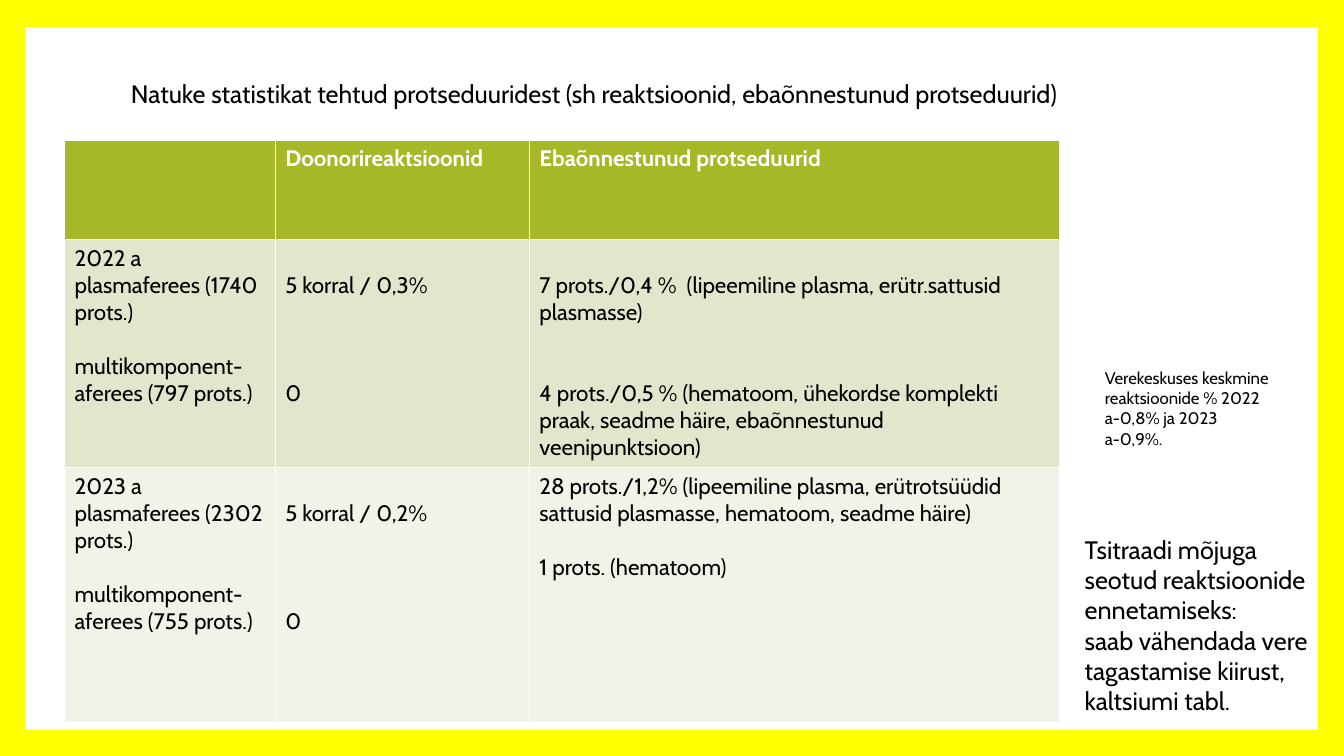
from dataclasses import dataclass

import pptx
import pptx.dml.color
import pptx.enum.shapes
import pptx.enum.text
import pptx.slide
import pptx.table
import pptx.text.text
import pptx.util

Inches = pptx.util.Inches
Pt = pptx.util.Pt
RGBColor = pptx.dml.color.RGBColor

YELLOW = RGBColor(0xFF, 0xFF, 0x00)
WHITE = RGBColor(0xFF, 0xFF, 0xFF)
BLACK = RGBColor(0x00, 0x00, 0x00)
HEADER_GREEN = RGBColor(0xA6, 0xB7, 0x27)
BAND_GREEN = RGBColor(0xE1, 0xE6, 0xCD)
PALE_GREEN = RGBColor(0xF1, 0xF3, 0xE8)

FONT = "Cabin"
TABLE_SIZE = 16
LINE_HEIGHT = 19.3  # points taken by one line of table text
CELL_MARGIN = 3.6


@dataclass(frozen=True)
class Line:
    text: str
    gap: int = 0  # empty lines above


@dataclass(frozen=True)
class Row:
    height: float
    fill: RGBColor
    color: RGBColor
    bold: bool
    cells: list[list[Line]]


@dataclass(frozen=True)
class Note:
    left: float
    top: float
    width: float
    height: float
    size: int
    wrap: bool
    texts: list[str]


COLUMN_WIDTHS = [2.09, 2.52, 5.26]

ROWS = [
    Row(0.99, HEADER_GREEN, WHITE, True, [
        [],
        [Line("Doonorireaktsioonid")],
        [Line("Ebaõnnestunud protseduurid")],
    ]),
    Row(2.26, BAND_GREEN, BLACK, False, [
        [Line("2022 a"), Line("plasmaferees (1740 prots.)"),
         Line("multikomponent-aferees (797 prots.)", 1)],
        [Line("5 korral / 0,3%", 1), Line("0", 3)],
        [Line("7 prots./0,4 %  (lipeemiline plasma, erütr.sattusid plasmasse)", 1),
         Line("4 prots./0,5 % (hematoom, ühekordse komplekti praak, "
              "seadme häire, ebaõnnestunud veenipunktsioon)", 2)],
    ]),
    Row(2.53, PALE_GREEN, BLACK, False, [
        [Line("2023 a"), Line("plasmaferees (2302 prots.)"),
         Line("multikomponent-aferees (755 prots.)", 1)],
        [Line("5 korral / 0,2%", 1), Line("0", 3)],
        [Line("28 prots./1,2% (lipeemiline plasma, erütrotsüüdid "
              "sattusid plasmasse, hematoom, seadme häire)"),
         Line("1 prots. (hematoom)", 1)],
    ]),
]

NOTES = [
    Note(1.2, 0.73, 9.45, 1.92, 18, False, [
        "Natuke statistikat tehtud protseduuridest "
        "(sh reaktsioonid, ebaõnnestunud protseduurid)"]),
    Note(10.66, 5.25, 2.53, 1.92, 18, True, [
        "Tsitraadi mõjuga seotud reaktsioonide ennetamiseks:",
        "saab vähendada vere tagastamise kiirust, kaltsiumi tabl."]),
    Note(10.86, 3.6, 1.9, 0.71, 12, True, [
        "Verekeskuses keskmine reaktsioonide % 2022 a-0,8% ja 2023 a-0,9%."]),
]


def add_paragraph(frame: pptx.text.text.TextFrame, index: int, text: str,
                  size: int, color: RGBColor, bold: bool = False):
    paragraph = frame.add_paragraph() if index else frame.paragraphs[0]
    paragraph.text = text
    font = paragraph.font
    font.name, font.size, font.bold = FONT, Pt(size), bold
    font.color.rgb = color
    return paragraph


def fill_cell(cell: pptx.table._Cell, lines: list[Line], row: Row) -> None:
    cell.fill.solid()
    cell.fill.fore_color.rgb = row.fill
    for index, line in enumerate(lines):
        paragraph = add_paragraph(cell.text_frame, index, line.text,
                                  TABLE_SIZE, row.color, row.bold)
        space = line.gap * LINE_HEIGHT
        if index:
            paragraph.space_before = Pt(space)
        else:
            cell.margin_top = Pt(CELL_MARGIN + space)


def add_statistics(slide: pptx.slide.Slide) -> None:
    table = slide.shapes.add_table(
        len(ROWS), len(COLUMN_WIDTHS), Inches(0.64), Inches(1.39),
        Inches(sum(COLUMN_WIDTHS)), Inches(sum(row.height for row in ROWS))).table
    for column, width in zip(table.columns, COLUMN_WIDTHS):
        column.width = Inches(width)
    for row_index, row in enumerate(ROWS):
        table.rows[row_index].height = Inches(row.height)
        for column_index, lines in enumerate(row.cells):
            fill_cell(table.cell(row_index, column_index), lines, row)


def add_note(slide: pptx.slide.Slide, note: Note) -> None:
    frame = slide.shapes.add_textbox(Inches(note.left), Inches(note.top),
                                     Inches(note.width), Inches(note.height)).text_frame
    frame.word_wrap = note.wrap
    frame.auto_size = pptx.enum.text.MSO_AUTO_SIZE.SHAPE_TO_FIT_TEXT
    for index, text in enumerate(note.texts):
        add_paragraph(frame, index, text, note.size, BLACK)


def main() -> None:
    presentation = pptx.Presentation()
    presentation.slide_width = Inches(13.33)
    presentation.slide_height = Inches(7.5)
    slide = presentation.slides.add_slide(presentation.slide_layouts[6])

    # Yellow frame around a white page
    slide.background.fill.solid()
    slide.background.fill.fore_color.rgb = YELLOW
    page = slide.shapes.add_shape(pptx.enum.shapes.MSO_SHAPE.RECTANGLE, Inches(0.25),
                                  Inches(0.27), Inches(12.82), Inches(6.97))
    page.shadow.inherit = False
    page.fill.solid()
    page.fill.fore_color.rgb = WHITE
    page.line.fill.background()

    # Table, title and side notes
    add_statistics(slide)
    for note in NOTES:
        add_note(slide, note)

    presentation.save("out.pptx")


if __name__ == "__main__":
    main()
